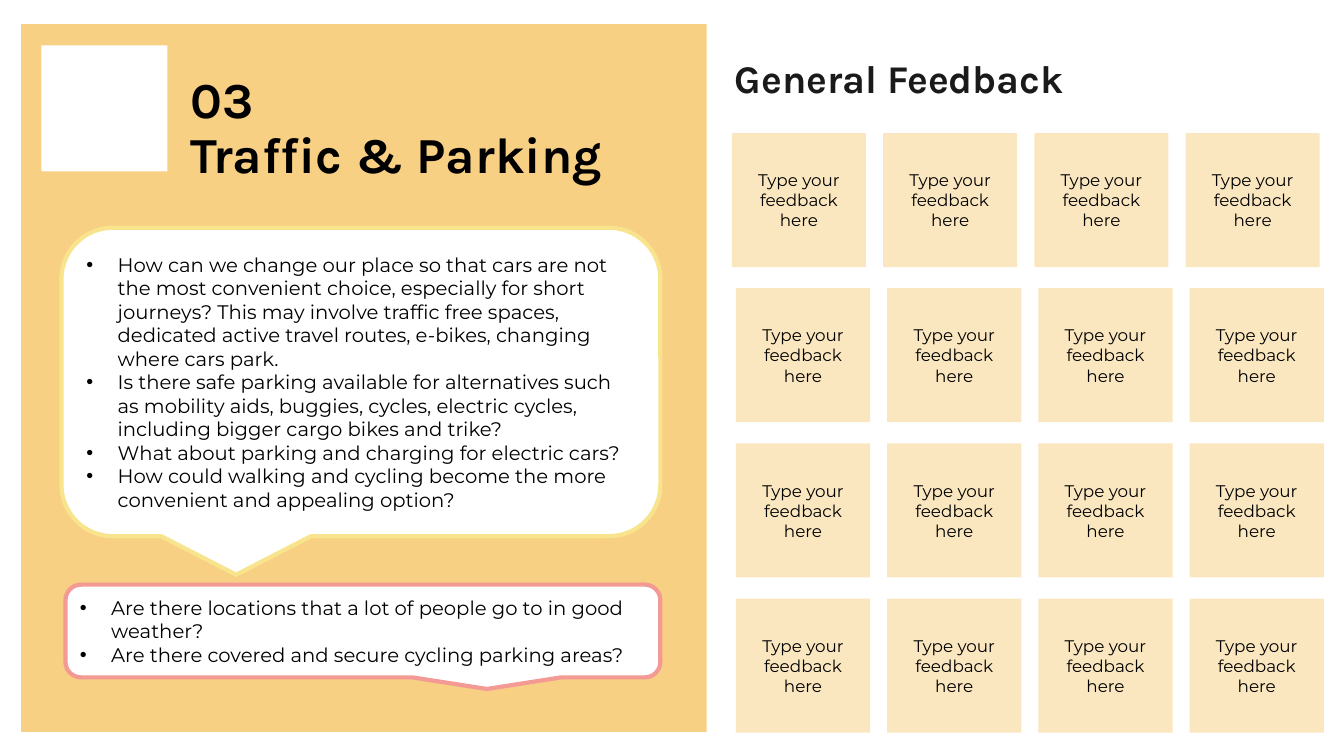
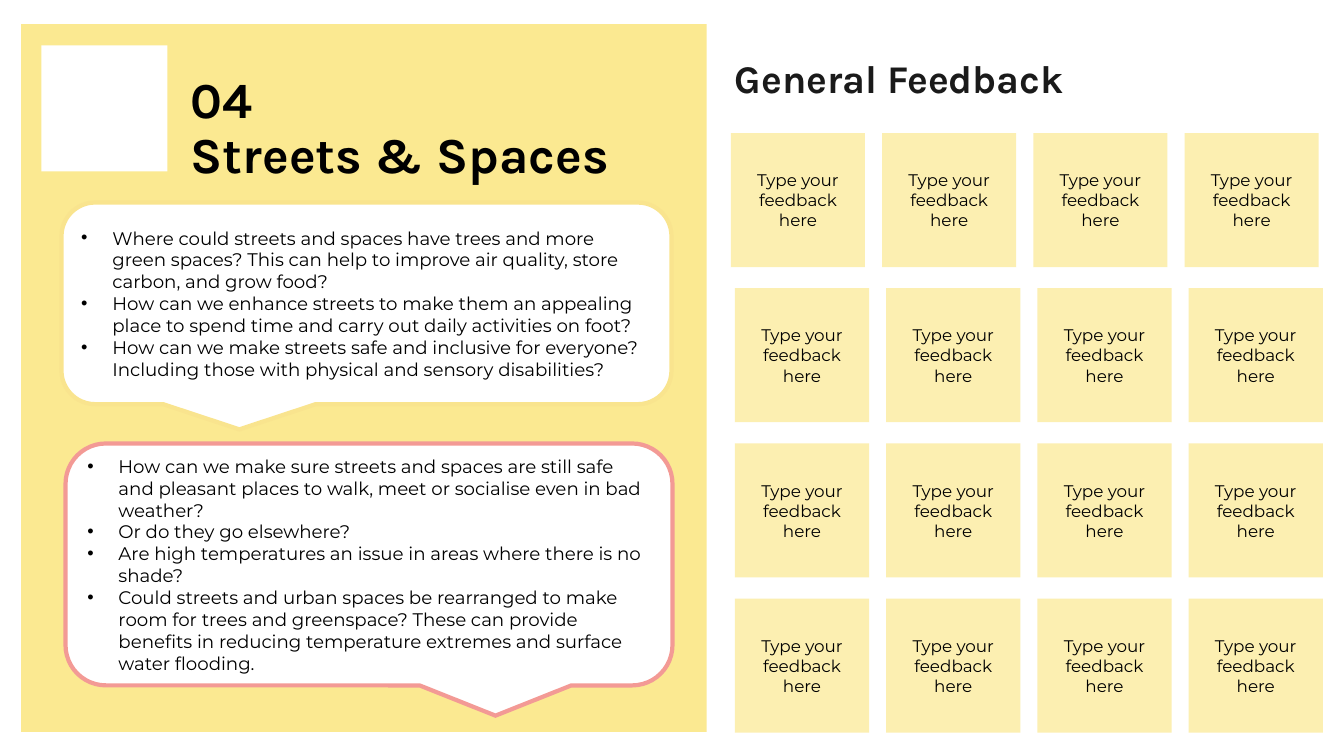
from pptx import Presentation
from pptx.dml.color import RGBColor
from pptx.enum.shapes import MSO_SHAPE
from pptx.enum.text import MSO_ANCHOR, MSO_AUTO_SIZE, PP_ALIGN
from pptx.oxml.ns import qn
from pptx.util import Inches, Pt
from lxml import etree

RECT = MSO_SHAPE.RECTANGLE
BUBBLE = MSO_SHAPE.ROUNDED_RECTANGULAR_CALLOUT
MIDDLE = MSO_ANCHOR.MIDDLE
LEFT, CENTER = PP_ALIGN.LEFT, PP_ALIGN.CENTER

COLORS = {
    "amber": "F7D083",
    "lemon": "FBE991",
    "cream": "F9E48E",
    "coral": "F39A95",
    "white": "FFFFFF",
    "black": "000000",
    "ink": "1A1A1A",
}
HEAD, BODY = "Karla", "Montserrat"
SIDE, COL, ROW, SHIFT = 1.33, 1.5, 1.54, 0.04
INDENT = Inches(0.31)

TOPICS = [
    {
        "title": "03 \vTraffic & Parking",
        "color": "amber", "alpha": 50, "left": 7.26, "size": 14,
        "bubbles": [
            ((0.61, 2.26, 5.94, 3.06), "cream", [
                "How can we change our place so that cars are not the most convenient choice, especially for short journeys? This may involve traffic free spaces, dedicated active travel routes, e-bikes, changing where cars park.",
                "Is there safe parking available for alternatives such as mobility aids, buggies, cycles, electric cycles, including bigger cargo bikes and trike?",
                "What about parking and charging for electric cars?",
                "How could walking and cycling become the more convenient and appealing option?",
            ]),
            ((0.65, 5.8, 5.9, 0.92), "coral", [
                "Are there locations that a lot of people go to in good weather?",
                "Are there covered and secure cycling parking areas?",
            ]),
        ],
    },
    {
        "title": "04 \vStreets & Spaces",
        "color": "lemon", "alpha": 70, "left": 7.25, "size": 13,
        "bubbles": [
            ((0.61, 2.01, 6.05, 2), "cream", [
                "Where could streets and spaces have trees and more green spaces? This can help to improve air quality, store carbon, and grow food?",
                "How can we enhance streets to make them an appealing place to spend time and carry out daily activities on foot?",
                "How can we make streets safe and inclusive for everyone? Including those with physical and sensory disabilities?",
            ]),
            ((0.65, 4.4, 6.02, 2.4), "coral", [
                "How can we make sure streets and spaces are still safe and pleasant places to walk, meet or socialise even in bad weather?",
                "Or do they go elsewhere?",
                "Are high temperatures an issue in areas where there is no shade?",
                "Could streets and urban spaces be rearranged to make room for trees and greenspace? These can provide benefits in reducing temperature extremes and surface water flooding.",
            ]),
        ],
    },
]


def add_box(slide, kind, box, color):
    shape = slide.shapes.add_shape(kind, *map(Inches, box))
    shape.shadow.inherit = False
    shape.fill.solid()
    shape.fill.fore_color.rgb = RGBColor.from_string(COLORS[color])
    shape.line.fill.background()
    return shape


def set_text(shape, lines, face, size, color, align=LEFT, bullet=False):
    frame = shape.text_frame
    frame.word_wrap = True
    frame.auto_size = MSO_AUTO_SIZE.NONE
    frame.vertical_anchor = MIDDLE
    frame.text = "\n".join(lines)
    for para in frame.paragraphs:
        para.alignment = align
        if bullet:
            props = para._p.get_or_add_pPr()
            props.set("marL", str(INDENT))
            props.set("indent", str(-INDENT))
            etree.SubElement(props, qn("a:buFont")).set("typeface", "Arial")
            etree.SubElement(props, qn("a:buChar")).set("char", "•")
        if face == HEAD:
            para.line_spacing = 0.9
        para.font.name = face
        para.font.size = Pt(size)
        para.font.bold = face == HEAD
        para.font.color.rgb = RGBColor.from_string(COLORS[color])


deck = Presentation()
deck.slide_width, deck.slide_height = Inches(13.33), Inches(7.5)

for topic in TOPICS:
    slide = deck.slides.add_slide(deck.slide_layouts[5])
    title = slide.shapes.title
    add_box(slide, RECT, (0.21, 0.24, 6.8, 7.02), topic["color"])
    add_box(slide, RECT, (0.41, 0.45, 1.25, 1.25), "white")

    slide.shapes._spTree.append(title._element)
    title.left, title.top = Inches(1.79), Inches(0.56)
    title.width, title.height = Inches(11.5), Inches(1.45)
    set_text(title, [topic["title"]], HEAD, 36, "black")

    for row in range(4):
        for col in range(4):
            left = topic["left"] + col * COL + (SHIFT if row else 0)
            note = add_box(slide, RECT, (left, 1.32 + row * ROW, SIDE, SIDE), topic["color"])
            tint = note._element.spPr.find(".//" + qn("a:srgbClr"))
            etree.SubElement(tint, qn("a:alpha")).set("val", str(topic["alpha"] * 1000))
            set_text(note, ["Type your feedback here"], BODY, 12, "black", CENTER)

    for box, edge, lines in topic["bubbles"]:
        bubble = add_box(slide, BUBBLE, box, "white")
        bubble.line.color.rgb = RGBColor.from_string(COLORS[edge])
        bubble.line.width = Pt(3)
        stroke = bubble._element.spPr.find(qn("a:ln"))
        etree.SubElement(stroke, qn("a:miter")).set("lim", "800000")
        if edge == "coral":
            bubble._element.spPr.find(qn("a:xfrm")).set("flipH", "1")
        set_text(bubble, lines, BODY, topic["size"], "black", bullet=True)

    label = slide.shapes.add_textbox(*map(Inches, (7.19, 0.08, 5.9, 1.45)))
    set_text(label, ["General Feedback"], HEAD, 28, "ink")

deck.save("out.pptx")
